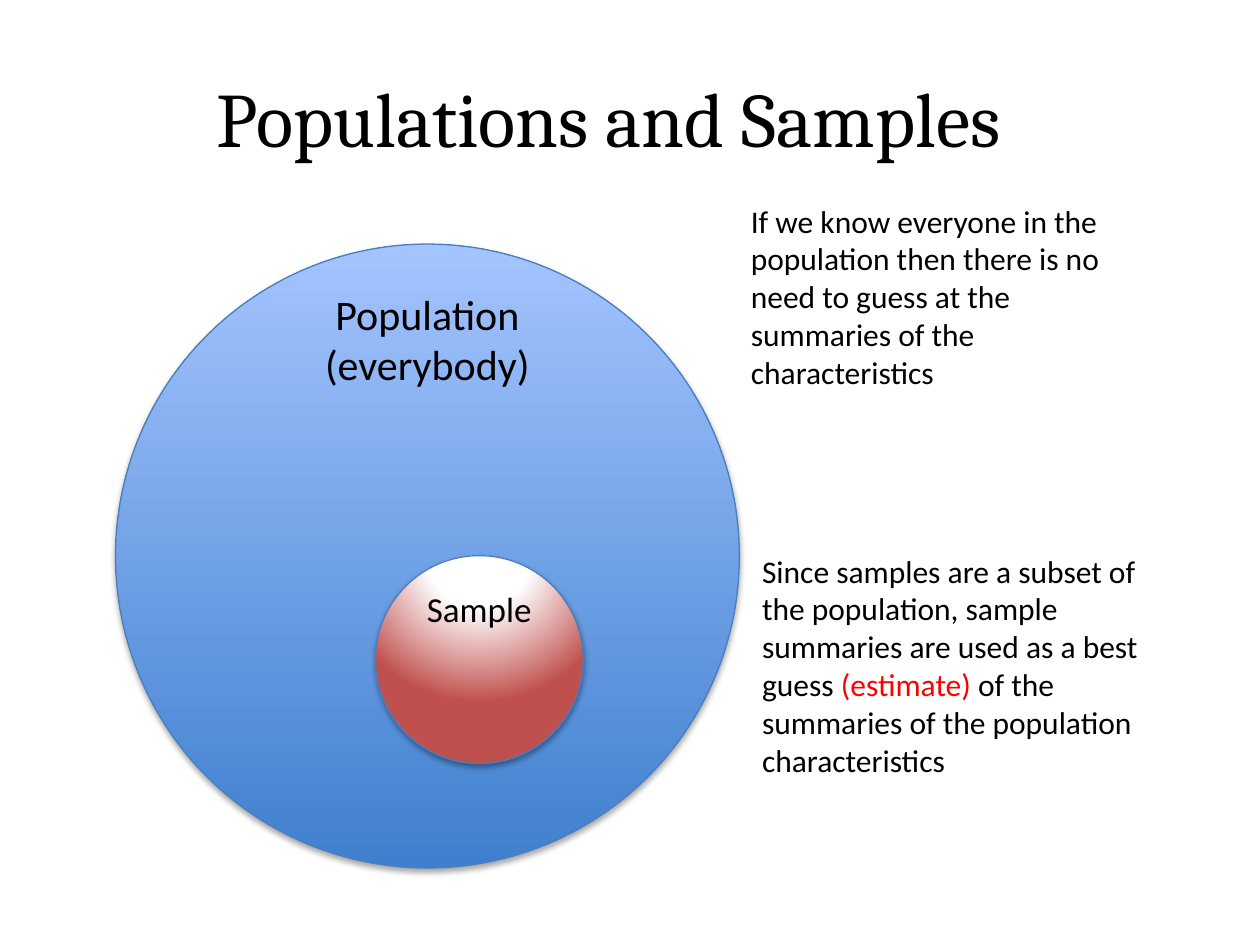
from lxml.etree import SubElement
from pptx import Presentation
from pptx.dml.color import RGBColor
from pptx.enum.shapes import MSO_SHAPE
from pptx.enum.text import MSO_ANCHOR, MSO_AUTO_SIZE, PP_ALIGN
from pptx.oxml.ns import qn
from pptx.util import Pt

BLACK = RGBColor(0x00, 0x00, 0x00)
WHITE = RGBColor(0xFF, 0xFF, 0xFF)
RED = RGBColor(0xFF, 0x00, 0x00)
BRICK = RGBColor(0xC0, 0x50, 0x4D)
BLUE = RGBColor(0x3F, 0x80, 0xCE)
LIGHT_BLUE = RGBColor(0xA4, 0xC4, 0xFF)
OUTLINE = RGBColor(0x4B, 0x7E, 0xBC)


def add_text(slide, box, runs, size=18, font="Calibri", align=PP_ALIGN.LEFT,
             anchor=MSO_ANCHOR.TOP, fill=None):
    """Place one paragraph; runs are (text, colour) pairs, a newline is a line break."""
    shape = slide.shapes.add_textbox(*map(Pt, box))
    if fill is not None:
        shape.fill.solid()
        shape.fill.fore_color.rgb = fill
    frame = shape.text_frame
    frame.word_wrap = True
    frame.auto_size = MSO_AUTO_SIZE.NONE
    frame.vertical_anchor = anchor
    paragraph = frame.paragraphs[0]
    paragraph.alignment = align
    for text, colour in runs:
        for number, line in enumerate(text.split("\n")):
            if number:
                paragraph.add_line_break()
            run = paragraph.add_run()
            run.text = line
            run.font.size = Pt(size)
            run.font.name = font
            run.font.color.rgb = colour
    return shape


def add_colour(parent, colour, alpha=None):
    element = SubElement(parent, qn("a:srgbClr"), val=str(colour))
    if alpha is not None:
        SubElement(element, qn("a:alpha"), val=str(alpha * 1000))


def add_circle(slide, box, stops, radial=False):
    """Place a shadowed circle with a gradient of (percent, colour) stops."""
    circle = slide.shapes.add_shape(MSO_SHAPE.OVAL, *map(Pt, box))
    circle.line.color.rgb = OUTLINE
    circle.line.width = Pt(0.75)
    circle.shadow.inherit = False
    properties = circle._element.spPr

    # Gradient fill, which goes right before the line
    gradient = SubElement(properties, qn("a:gradFill"), rotWithShape="1")
    stop_list = SubElement(gradient, qn("a:gsLst"))
    for percent, colour in stops:
        add_colour(SubElement(stop_list, qn("a:gs"), pos=str(percent * 1000)), colour)
    if radial:
        centre = SubElement(gradient, qn("a:path"), path="circle")
        SubElement(centre, qn("a:fillToRect"),
                   l="50000", t="-80000", r="50000", b="180000")
    else:
        SubElement(gradient, qn("a:lin"), ang=str(270 * 60000), scaled="0")
    properties.find(qn("a:ln")).addprevious(gradient)

    # Soft shadow straight below
    shadow = SubElement(properties.find(qn("a:effectLst")), qn("a:outerShdw"),
                        blurRad=str(Pt(3.1)), dist=str(Pt(1.8)),
                        dir=str(90 * 60000), rotWithShape="0")
    add_colour(shadow, BLACK, alpha=35)


def add_population(slide, box):
    left, top, width, _ = box
    add_circle(slide, box, [(0, BLUE), (100, LIGHT_BLUE)])
    label_width = 155
    add_text(slide, (left + (width - label_width) / 2, top + 21.6, label_width, 65.5),
             [("Population\n(everybody)", BLACK)], size=24, align=PP_ALIGN.CENTER)


def add_sample(slide, box):
    left, top, width, _ = box
    add_circle(slide, box, [(0, WHITE), (35, WHITE), (100, BRICK)], radial=True)
    label_width = 130
    add_text(slide, (left + (width - label_width) / 2, top + 14.4, label_width, 31.5),
             [("Sample", BLACK)], size=20, align=PP_ALIGN.CENTER)


def add_title(slide, box):
    add_text(slide, box, [("Populations and Samples", BLACK)], size=44, font="Cambria",
             align=PP_ALIGN.CENTER, anchor=MSO_ANCHOR.MIDDLE)


def add_population_note(slide, box):
    add_text(slide, box, [("If we know everyone in the population then there is no need "
                           "to guess at the summaries of the characteristics", BLACK)],
             fill=WHITE)


def add_sample_note(slide, box):
    add_text(slide, box, [
        ("Since samples are a subset of the population, sample summaries are used "
         "as a best guess ", BLACK),
        ("(estimate)", RED),
        (" of the summaries of the population characteristics", BLACK),
    ])


def main():
    presentation = Presentation()
    presentation.slide_width = Pt(720)
    presentation.slide_height = Pt(540)
    slide = presentation.slides.add_slide(presentation.slide_layouts[6])

    add_title(slide, (24, 21.6, 648, 90))
    add_population(slide, (66, 139.5, 356.5, 356.5))
    add_population_note(slide, (422, 111.6, 244, 116.6))
    add_sample(slide, (214.5, 317.5, 118.8, 118.8))
    add_sample_note(slide, (428.4, 311.6, 244, 138.2))

    presentation.save("out.pptx")


if __name__ == "__main__":
    main()
